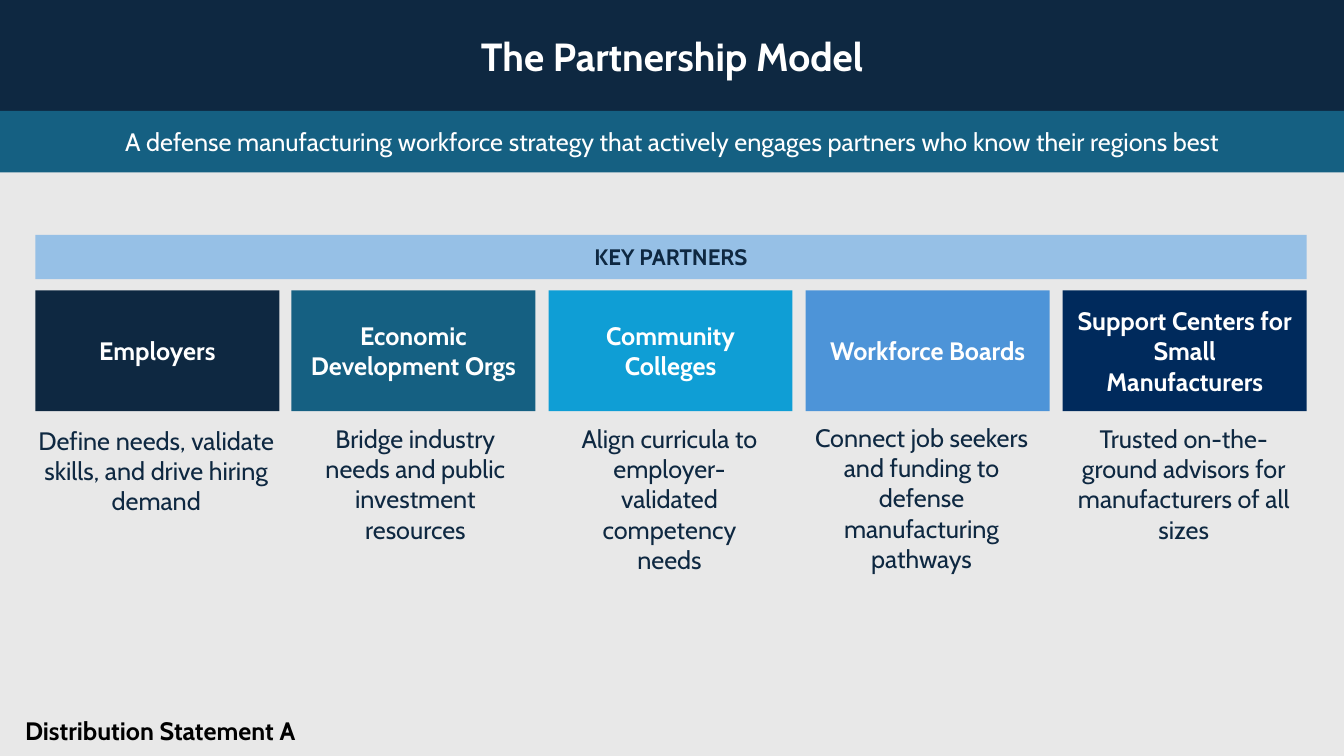
from dataclasses import dataclass

from pptx import Presentation
from pptx.dml.color import RGBColor
from pptx.enum.shapes import MSO_SHAPE as Shape
from pptx.enum.text import MSO_ANCHOR as Anchor, PP_ALIGN as Align
from pptx.slide import Slide
from pptx.text.text import TextFrame
from pptx.util import Pt

EMU_PER_PX = 9144


@dataclass(frozen=True)
class Theme:
    font: str = "Cabin"
    page: str = "E8E8E8"
    white: str = "FFFFFF"
    black: str = "000000"
    ink: str = "0E2841"
    teal: str = "156082"
    pale: str = "96C0E6"
    cyan: str = "0F9ED5"
    blue: str = "4D94D8"
    navy: str = "002A5C"
    title_size: int = 28
    body_size: int = 18
    label_size: int = 16


@dataclass(frozen=True)
class Area:
    left: int
    top: int
    width: int
    height: int

    def emu(self) -> tuple[int, int, int, int]:
        return px(self.left), px(self.top), px(self.width), px(self.height)


@dataclass(frozen=True)
class Style:
    size: int
    color: str
    bold: bool = False
    align: Align = Align.CENTER


@dataclass(frozen=True)
class Band:
    area: Area
    fill: str
    text: str
    style: Style
    inset_x: int = 20
    inset_y: int = 5


@dataclass(frozen=True)
class Partner:
    name: str
    fill: str
    role: str
    role_area: Area


THEME = Theme()
CARD_STYLE = Style(THEME.body_size, THEME.white, bold=True)
ROLE_STYLE = Style(THEME.body_size, THEME.ink)
FOOTER_STYLE = Style(THEME.body_size, THEME.black, bold=True, align=Align.LEFT)

PAGE_WIDTH, PAGE_HEIGHT = 1333, 750
ROW_LEFT, ROW_WIDTH = 35, 1261
CARD_TOP, CARD_WIDTH, CARD_HEIGHT = 288, 242, 120

BANDS = [
    Band(Area(0, 0, PAGE_WIDTH, 110), THEME.ink, "The Partnership Model",
         Style(THEME.title_size, THEME.white, bold=True)),
    Band(Area(0, 110, PAGE_WIDTH, 61), THEME.teal,
         "A defense manufacturing workforce strategy that actively engages "
         "partners who know their regions best",
         Style(THEME.body_size, THEME.white)),
    Band(Area(ROW_LEFT, 233, ROW_WIDTH, 44), THEME.pale, "KEY PARTNERS",
         Style(THEME.label_size, THEME.ink, bold=True)),
]

PARTNERS = [
    Partner("Employers", THEME.ink,
            "Define needs, validate skills, and drive hiring demand",
            Area(22, 417, 266, 77)),
    Partner("Economic Development Orgs", THEME.teal,
            "Bridge industry needs and public investment resources",
            Area(302, 415, 220, 77)),
    Partner("Community Colleges", THEME.cyan,
            "Align curricula to employer-validated competency needs",
            Area(554, 415, 220, 77)),
    Partner("Workforce Boards", THEME.blue,
            "Connect job seekers and funding to defense manufacturing pathways",
            Area(793, 414, 242, 77)),
    Partner("Support Centers for Small Manufacturers", THEME.navy,
            "Trusted on-the-ground advisors for manufacturers of all sizes",
            Area(1053, 415, 242, 77)),
]


def px(length: int) -> int:
    return length * EMU_PER_PX


def write(frame: TextFrame, text: str, style: Style, anchor: Anchor) -> None:
    frame.text = text
    frame.word_wrap = True
    frame.vertical_anchor = anchor
    para = frame.paragraphs[0]
    para.alignment = style.align
    font = para.runs[0].font
    font.name = THEME.font
    font.size = Pt(style.size)
    font.bold = style.bold
    font.color.rgb = RGBColor.from_string(style.color)


def add_band(page: Slide, band: Band) -> None:
    box = page.shapes.add_shape(Shape.RECTANGLE, *band.area.emu())
    box.shadow.inherit = False
    box.fill.solid()
    box.fill.fore_color.rgb = RGBColor.from_string(band.fill)
    box.line.fill.background()
    frame = box.text_frame
    frame.margin_left = frame.margin_right = px(band.inset_x)
    frame.margin_top = frame.margin_bottom = px(band.inset_y)
    write(frame, band.text, band.style, Anchor.MIDDLE)


def add_text(page: Slide, area: Area, text: str, style: Style,
             anchor: Anchor = Anchor.TOP) -> TextFrame:
    frame = page.shapes.add_textbox(*area.emu()).text_frame
    write(frame, text, style, anchor)
    return frame


def add_partners(page: Slide) -> None:
    span = ROW_WIDTH - CARD_WIDTH
    for index, partner in enumerate(PARTNERS):
        left = ROW_LEFT + index * span // (len(PARTNERS) - 1)
        card = Area(left, CARD_TOP, CARD_WIDTH, CARD_HEIGHT)
        add_band(page, Band(card, partner.fill, partner.name, CARD_STYLE, 10, 10))
        add_text(page, partner.role_area, partner.role, ROLE_STYLE)


def main() -> None:
    """Build the partnership model slide and save it."""
    deck = Presentation()
    deck.slide_width, deck.slide_height = px(PAGE_WIDTH), px(PAGE_HEIGHT)
    page = deck.slides.add_slide(deck.slide_layouts[6])
    page.background.fill.solid()
    page.background.fill.fore_color.rgb = RGBColor.from_string(THEME.page)
    for band in BANDS:
        add_band(page, band)
    add_partners(page)
    footer = add_text(page, Area(15, 703, 714, 42), "Distribution Statement A",
                      FOOTER_STYLE, Anchor.BOTTOM)
    footer.paragraphs[0].line_spacing = 0.9
    deck.save("out.pptx")


if __name__ == "__main__":
    main()
